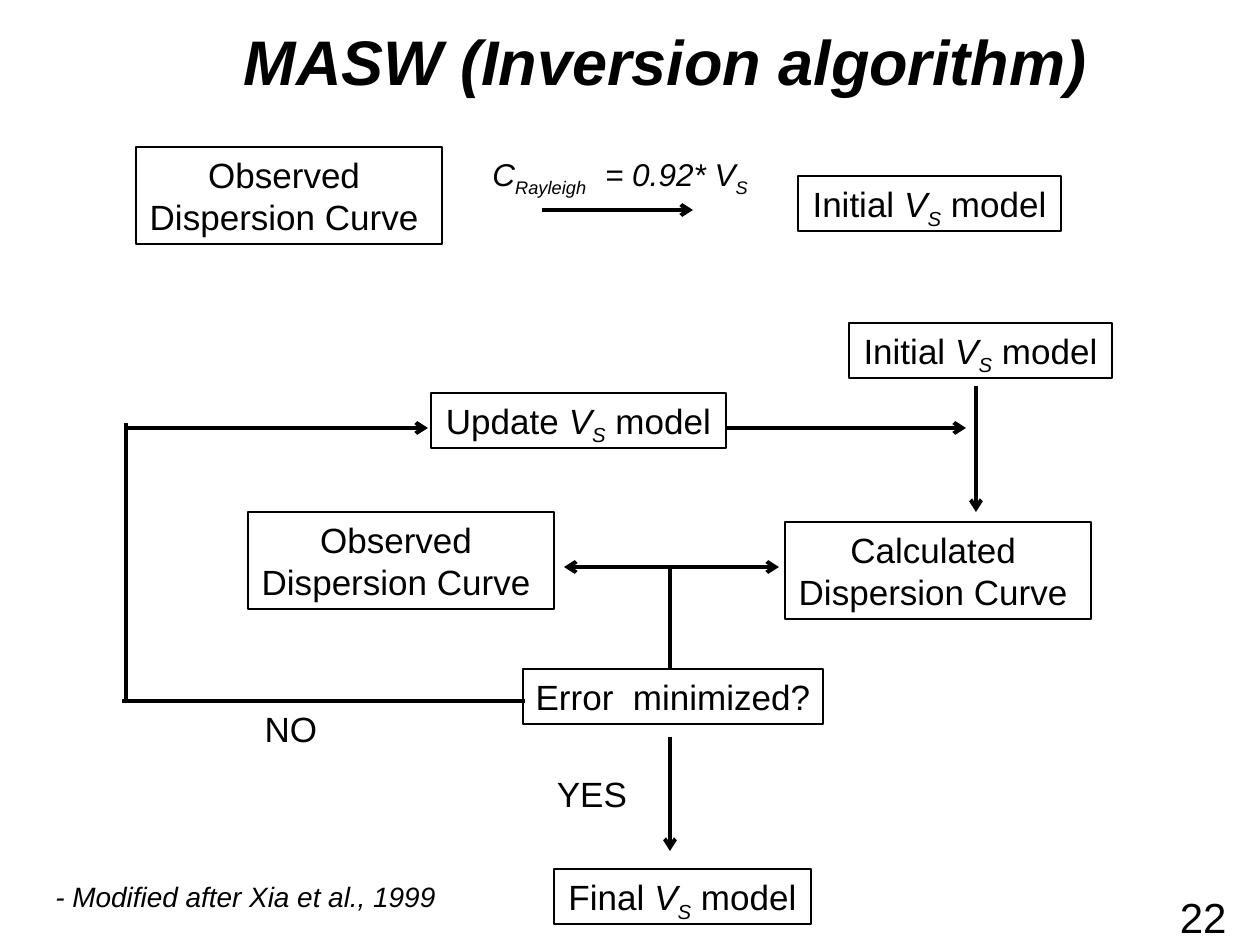
from dataclasses import dataclass

from lxml import etree
from pptx import Presentation
from pptx.dml.color import RGBColor
from pptx.enum.shapes import MSO_CONNECTOR, MSO_SHAPE
from pptx.enum.text import MSO_ANCHOR, MSO_AUTO_SIZE, PP_ALIGN
from pptx.oxml.ns import qn
from pptx.util import Emu, Pt

PX = 914400 / 126
LEFT, CENTER, RIGHT = PP_ALIGN.LEFT, PP_ALIGN.CENTER, PP_ALIGN.RIGHT
TOP, MIDDLE = MSO_ANCHOR.TOP, MSO_ANCHOR.MIDDLE
NO_FIT, FIT_SHAPE = MSO_AUTO_SIZE.NONE, MSO_AUTO_SIZE.SHAPE_TO_FIT_TEXT
RECT, STRAIGHT = MSO_SHAPE.RECTANGLE, MSO_CONNECTOR.STRAIGHT


@dataclass(frozen=True)
class Theme:
    font: str = "Arial"
    ink: RGBColor = RGBColor(0, 0, 0)
    paper: RGBColor = RGBColor(255, 255, 255)
    title: int = 36
    number: int = 24
    body: int = 20
    formula: int = 18
    source: int = 16
    border: float = 0.75
    arrow: float = 2.25


THEME = Theme()

# Each line of text is a list of (text, style): b bold, i italic, s subscript
V_S = [("V", "i"), ("S", "is")]
OBSERVED = [[("Observed ", "")], [("Dispersion Curve ", "")]]
CALCULATED = [[("Calculated ", "")], [("Dispersion Curve ", "")]]
FORMULA = [[("C", "i"), ("Rayleigh  ", "is"), (" = 0.92* ", "i")] + V_S]

ONE_LINE, TWO_LINES = 55, 97  # box heights
CURVE_W, INITIAL_W = 306, 263
FLOW_X, LOOP_X, MODEL_X = 670, 126, 976  # vertical axes
UPDATE_Y, COMPARE_Y, RETURN_Y = 428, 567, 701  # horizontal axes


def px(*values):
    return [Emu(round(v * PX)) for v in values]


def model(name):
    return [[(name + " ", "")] + V_S + [(" model", "")]]


def plain(text, style=""):
    return [[(text, style)]]


def write(sp, lines, size, align=LEFT, anchor=TOP, fit=FIT_SHAPE):
    tf = sp.text_frame
    tf.word_wrap = False
    tf.auto_size = fit
    tf.vertical_anchor = anchor
    for n, line in enumerate(lines):
        p = tf.add_paragraph() if n else tf.paragraphs[0]
        p.alignment = align
        for text, style in line:
            r = p.add_run()
            r.text = text
            r.font.name = THEME.font
            r.font.size = Pt(size)
            r.font.color.rgb = THEME.ink
            r.font.bold = "b" in style
            r.font.italic = "i" in style
            if "s" in style:
                r._r.get_or_add_rPr().set("baseline", "-25000")


def add_title(s, text, *place):
    sp = s.shapes.title
    sp.left, sp.top, sp.width, sp.height = px(*place)
    write(sp, plain(text, "bi"), THEME.title)


def add_label(s, lines, size, *place, **layout):
    write(s.shapes.add_textbox(*px(*place)), lines, size, **layout)


def add_box(s, lines, x, y, w, h=ONE_LINE, border=True):
    sp = s.shapes.add_shape(RECT, *px(x, y, w, h))
    sp.shadow.inherit = False
    sp.fill.solid()
    sp.fill.fore_color.rgb = THEME.paper
    if border:
        sp.line.color.rgb = THEME.ink
        sp.line.width = Pt(THEME.border)
    else:
        sp.line.fill.background()
    write(sp, lines, THEME.body, CENTER)


def add_line(s, x1, y1, x2, y2, *ends):
    """Draw a line with arrowheads at the named ends: headEnd, tailEnd."""
    c = s.shapes.add_connector(STRAIGHT, *px(x1, y1, x2, y2))
    c.line.color.rgb = THEME.ink
    c.line.width = Pt(THEME.arrow)
    for end in ends:
        etree.SubElement(c.line._get_or_add_ln(), qn("a:" + end), type="arrow")
    etree.SubElement(c._element.spPr, qn("a:effectLst"))


def add_starting_model(s):
    add_box(s, OBSERVED, 136, 147, CURVE_W, TWO_LINES)
    add_label(s, FORMULA, THEME.formula, 480, 149, 297, 50)
    add_line(s, 542, 210, 693, 210, "tailEnd")
    add_box(s, model("Initial"), 798, 176, INITIAL_W)


def add_inversion_loop(s):
    add_box(s, model("Initial"), 849, 323, INITIAL_W)
    add_box(s, model("Update"), 431, 393, 295)
    add_box(s, OBSERVED, 248, 512, CURVE_W, TWO_LINES)
    add_box(s, CALCULATED, 785, 522, CURVE_W, TWO_LINES)
    add_box(s, plain("Error  minimized?"), 523, 669, 300)
    add_box(s, plain("NO"), 252, 701, 78, border=False)
    add_box(s, plain("YES"), 544, 766, 96, border=False)
    add_box(s, model("Final"), 554, 869, 257)

    add_line(s, MODEL_X, 386, MODEL_X, 512, "tailEnd")
    add_line(s, 564, COMPARE_Y, 779, COMPARE_Y, "headEnd", "tailEnd")
    add_line(s, FLOW_X, COMPARE_Y, FLOW_X, 668)
    add_line(s, FLOW_X, 737, FLOW_X, 851, "tailEnd")
    add_line(s, 525, RETURN_Y, 122, RETURN_Y)
    add_line(s, LOOP_X, 423, LOOP_X, RETURN_Y)
    add_line(s, LOOP_X, UPDATE_Y, 428, UPDATE_Y, "tailEnd")
    add_line(s, 727, UPDATE_Y, 966, UPDATE_Y, "tailEnd")


def main():
    prs = Presentation()
    prs.slide_width, prs.slide_height = px(1260, 945)
    s = prs.slides.add_slide(prs.slide_layouts[5])
    add_title(s, "MASW (Inversion algorithm)", 231, 16, 877, 89)
    add_starting_model(s)
    add_inversion_loop(s)
    add_label(s, plain("- Modified after Xia et al., 1999", "i"), THEME.source,
              43, 873, 411, 47)
    add_label(s, plain("22"), THEME.number, 945, 892, 294, 50,
              align=RIGHT, anchor=MIDDLE, fit=NO_FIT)
    prs.save("out.pptx")


if __name__ == "__main__":
    main()
